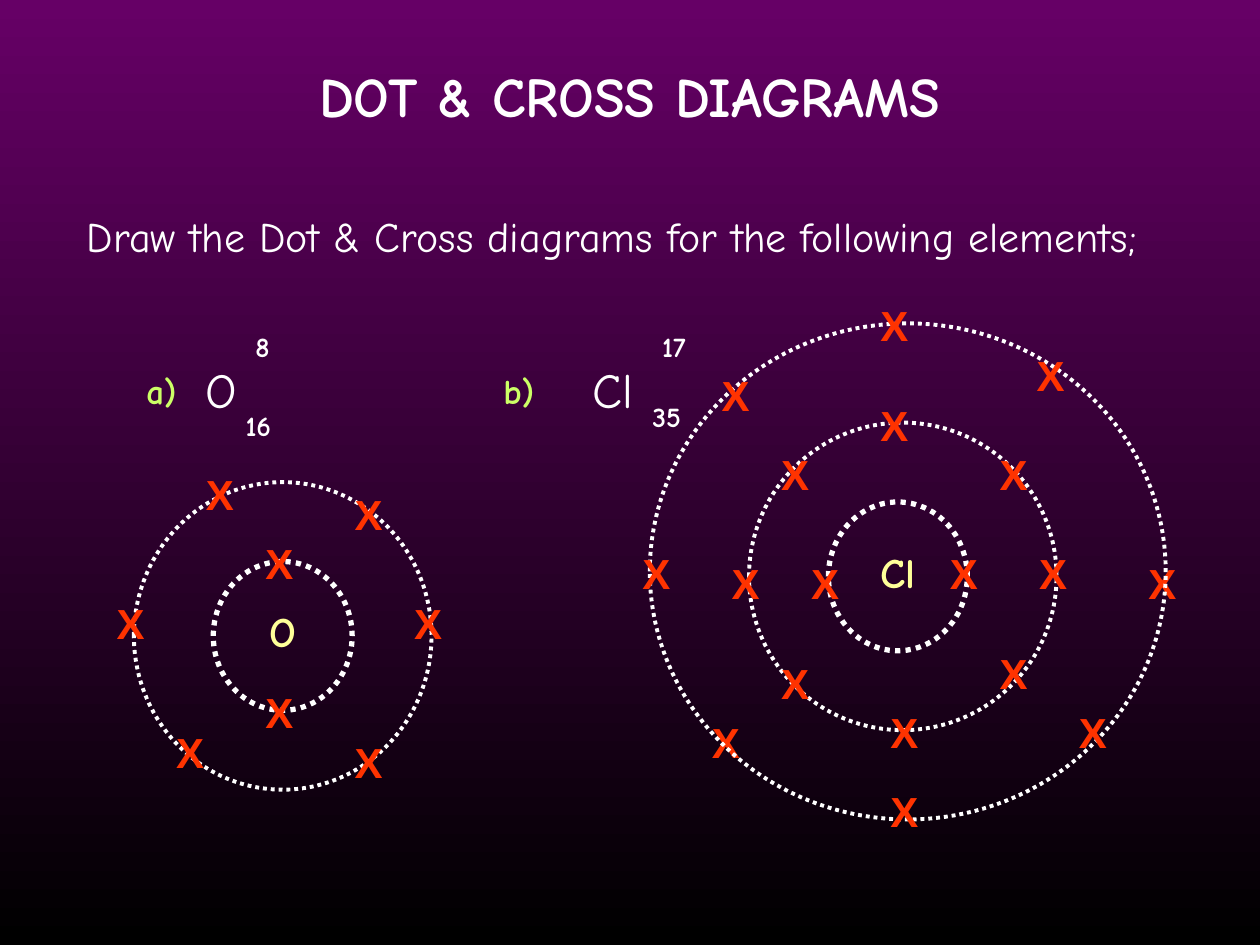
from pptx import Presentation
from pptx import util as u
from pptx.dml.color import RGBColor
from pptx.enum import dml, shapes, text

HUES = {"top": "660066", "base": "000000", "white": "FFFFFF",
        "label": "CCFF66", "core": "FFFF99", "cross": "FF3300"}
FONT = "Comic Neue"


def hue(name):
    return RGBColor.from_string(HUES[name])


def style(frame, size, tint, bold=True, face=FONT, align=None):
    para = frame.paragraphs[0]
    para.alignment = align
    font = para.runs[0].font
    font.size, font.bold, font.name = u.Pt(size), bold, face
    font.color.rgb = hue(tint)


def label(slide, words, x, y, w, h, size, tint="white", **look):
    box = slide.shapes.add_textbox(u.Cm(x), u.Cm(y), u.Cm(w), u.Cm(h))
    frame = box.text_frame
    frame.word_wrap = True
    frame.text = words
    style(frame, size, tint, **look)


def oval(slide, x, y, w, h):
    disc = slide.shapes.add_shape(shapes.MSO_SHAPE.OVAL,
                                  u.Cm(x), u.Cm(y), u.Cm(w), u.Cm(h))
    disc.shadow.inherit = False
    disc.fill.background()
    disc.line.fill.background()
    return disc


def core(slide, name, x, y):
    frame = oval(slide, x, y, 1.6, 1.6).text_frame
    frame.word_wrap = False
    frame.vertical_anchor = text.MSO_ANCHOR.MIDDLE
    frame.text = name
    style(frame, 24, "core", align=text.PP_ALIGN.CENTER)


def ring(slide, x, y, w, h, width=2.25):
    line = oval(slide, x, y, w, h).line
    line.color.rgb = hue("white")
    line.width = u.Pt(width)
    line.dash_style = dml.MSO_LINE.ROUND_DOT


def mark(slide, spots):
    for x, y in spots:
        label(slide, "X", x, y, 1.2, 1.27, 24, "cross", face="Arial")


def atom(slide, name, x, y, wide, spots):
    """Core with its first two shells and the crosses on them."""
    core(slide, name, x, y)
    ring(slide, x - 0.6, y - 0.6, 2.8, 3, 3)
    ring(slide, x - 2.2, y - 2.2, wide, 6.2)
    mark(slide, spots)


def paint(slide):
    fill = slide.background.fill
    fill.gradient()
    fill.gradient_angle = 270
    for stop, name, place in zip(fill.gradient_stops, ("top", "base"), (0, 1)):
        stop.color.rgb = hue(name)
        stop.position = place


def main():
    deck = Presentation()
    deck.slide_width, deck.slide_height = u.Cm(25.4), u.Cm(19.05)
    slide = deck.slides.add_slide(deck.slide_layouts[6])
    paint(slide)

    # Title and task
    label(slide, "DOT & CROSS DIAGRAMS", 0, 1.12, 25.4, 1.6, 32,
          align=text.PP_ALIGN.CENTER)
    label(slide, "Draw the Dot & Cross diagrams for the following elements;",
          1.5, 4.12, 22.4, 2.29, 24, bold=False)

    # Element symbols, their numbers and the part letters
    for name, x in (("O", 3.9), ("Cl", 11.7)):
        label(slide, name, x, 7.13, 1.8, 1.45, 28, bold=False)
    for count, x, y in (("8", 4.9, 6.52), ("17", 13.1, 6.52),
                        ("16", 4.7, 8.12), ("35", 12.9, 7.92)):
        label(slide, count, x, y, 1.4, 0.94, 16)
    for part, x in (("a)", 2.7), ("b)", 9.9)):
        label(slide, part, x, 7.32, 1.4, 1.1, 20, "label")

    # Oxygen
    atom(slide, "O", 4.9, 11.92, 6,
         [(3.9, 9.32), (5.1, 10.72), (6.9, 9.72), (5.1, 13.72),
          (8.1, 11.92), (3.3, 14.52), (2.1, 11.92), (6.9, 14.72)])

    # Chlorine, with its third shell above the first crosses
    atom(slide, "Cl", 17.3, 10.72, 6.2,
         [(17.5, 7.92), (18.9, 10.92), (19.9, 8.92), (16.1, 11.12),
          (22.9, 11.12), (14.1, 14.32), (15.5, 13.12), (17.7, 14.12),
          (14.5, 11.12), (15.5, 8.92)])
    ring(slide, 13.1, 6.52, 10.4, 10)
    mark(slide, [(20.7, 10.92), (19.9, 12.92), (12.7, 10.92), (20.65, 6.92),
                 (17.5, 5.92), (14.3, 7.32), (17.7, 15.72), (21.5, 14.12)])

    deck.save("out.pptx")


if __name__ == "__main__":
    main()
